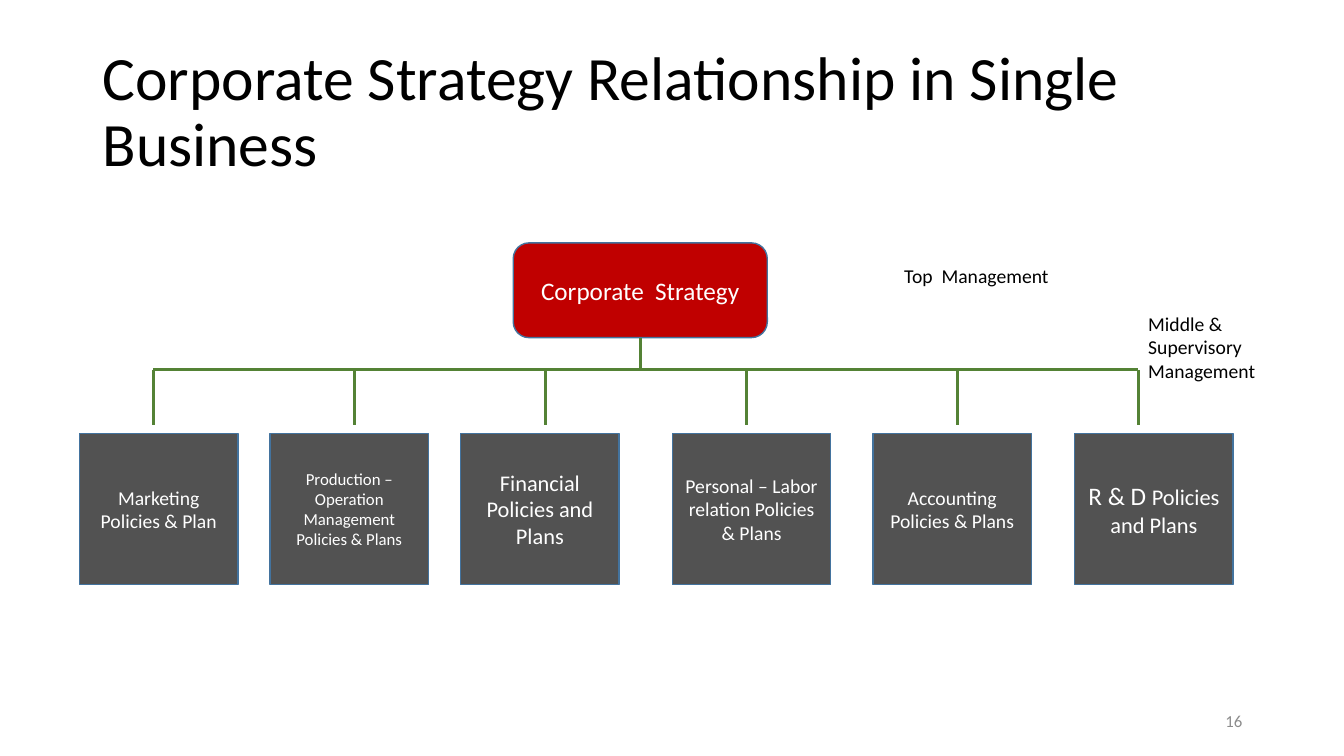
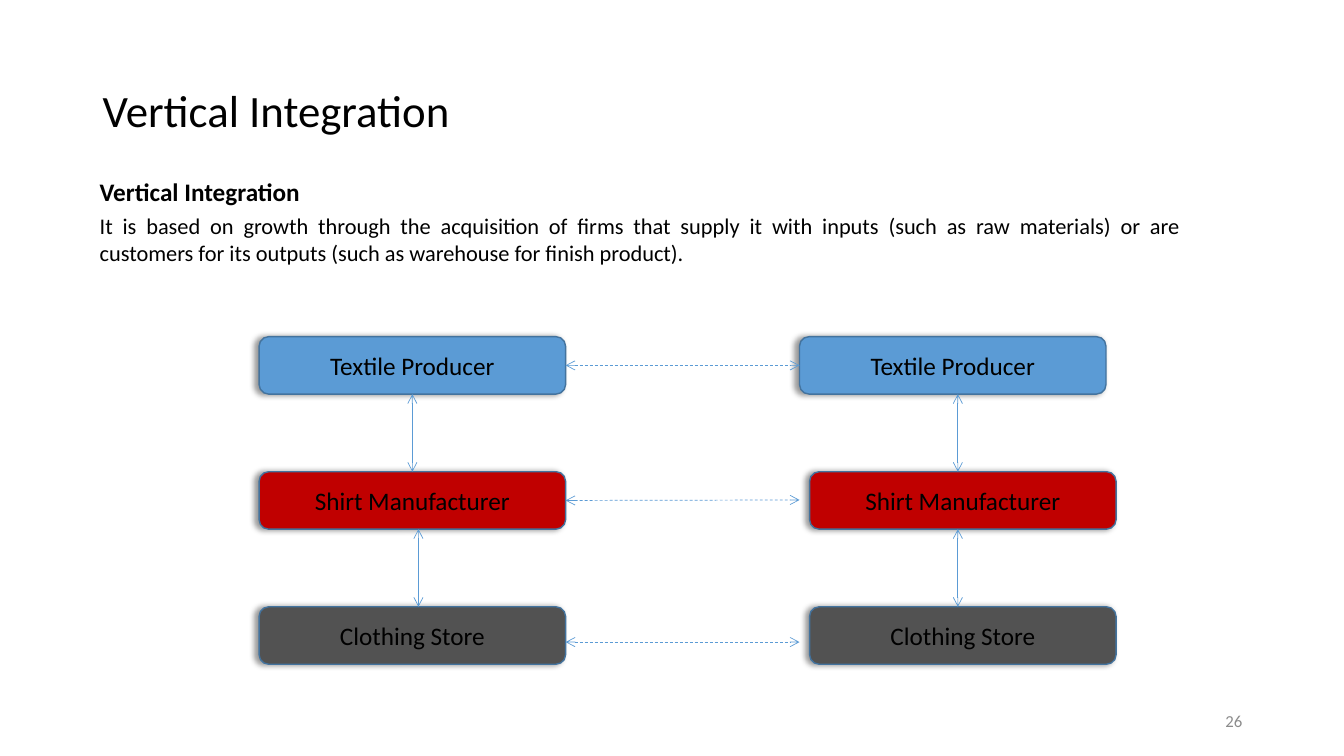
import dataclasses

import pptx
import pptx.dml.color
import pptx.enum.dml
import pptx.enum.shapes
import pptx.enum.text
import pptx.oxml
import pptx.oxml.ns
import pptx.util

ALIGN = pptx.enum.text.PP_ALIGN
ANCHOR = pptx.enum.text.MSO_ANCHOR
AUTO_SIZE = pptx.enum.text.MSO_AUTO_SIZE
SHAPE = pptx.enum.shapes.MSO_SHAPE
BOTTOM, RIGHT, LEFT, TOP = 2, 3, 1, 0
EMU_PER_PX = 9144  # 100 px to the inch
BLANK_LAYOUT = 6


@dataclasses.dataclass(frozen=True)
class Theme:
    font: str = "Calibri"
    black: str = "000000"
    white: str = "FFFFFF"
    muted: str = "8C8C8C"
    red: str = "C00000"
    grey: str = "525252"
    blue: str = "5B9BD5"
    outline: str = "43739E"
    green: str = "548235"
    title: int = 44
    small_title: int = 32
    heading: int = 18
    body: int = 16
    label: int = 14
    small: int = 12
    outline_width: float = 1
    tree_width: float = 2.25
    arrow_width: float = 0.5


THEME = Theme()

TITLE_BOX = (92, 40, 1150, 145)
NUMBER_BOX = (942, 695, 300, 40)

# Strategy tree
STRATEGY_TITLE = "Corporate Strategy Relationship in Single Business"
STRATEGY_BOX = (509, 241, 252, 94)
STRATEGY_TEXT = "Corporate  Strategy"
POLICY_TOP, POLICY_WIDTH, POLICY_HEIGHT = 430, 157, 150
BRANCH_TOP, BRANCH_BOTTOM = 367, 422
# box left, branch x, runs of (text, size)
POLICIES = [
    (79, 152, [("Marketing Policies & Plan", THEME.label)]),
    (268, 352, [("Production – Operation Management Policies & Plans", THEME.small)]),
    (457, 541, [("Financial Policies and Plans", THEME.body)]),
    (667, 740, [("Personal – Labor relation Policies & Plans", THEME.label)]),
    (866, 950, [("Accounting Policies & Plans", THEME.label)]),
    (1066, 1129, [("R & D ", THEME.heading), ("Policies and Plans", THEME.body)]),
]
LEVEL_LABELS = [
    ((1129, 304, 184, 81), "Middle & Supervisory Management"),
    ((887, 257, 283, 34), "Top  Management"),
]

# Vertical integration
INTEGRATION_TITLE = "Vertical Integration"
HEADING_BOX = (89, 170, 220, 40)
DEFINITION_BOX = (89, 206, 1092, 64)
DEFINITION = (
    "It is based on growth through the acquisition of firms that supply it with inputs "
    "(such as raw materials) or are customers for its outputs "
    "(such as warehouse for finish product)."
)
STAGE_LEFT, STAGE_TOP, STAGE_STEP = 257, 334, 134
STAGE_WIDTH, STAGE_HEIGHT = 304, 57
ACROSS_END = 793
# text, fill, left of the right-hand box, y of the arrow across
STAGES = [
    ("Textile Producer", THEME.blue, 793, 362),
    ("Shirt Manufacturer", THEME.red, 803, 496),
    ("Clothing Store", THEME.grey, 803, 637),
]
# x of the left and right arrows below each stage but the last
DOWN_ARROWS = [(409, 950), (415, 950)]


def px(value):
    return pptx.util.Emu(value * EMU_PER_PX)


def rgb(value):
    return pptx.dml.color.RGBColor.from_string(value)


def write(shape, runs, color, align=ALIGN.LEFT, anchor=ANCHOR.TOP, bold=False):
    """Fill the shape's one paragraph with (text, size) runs."""
    frame = shape.text_frame
    frame.word_wrap = True
    frame.vertical_anchor = anchor
    paragraph = frame.paragraphs[0]
    paragraph.alignment = align
    for text, size in runs:
        run = paragraph.add_run()
        run.text = text
        run.font.name = THEME.font
        run.font.size = pptx.util.Pt(size)
        run.font.bold = bold
        run.font.color.rgb = rgb(color)
    return paragraph


def add_text(slide, box, text, size, color=THEME.black, **style):
    shape = slide.shapes.add_textbox(*map(px, box))
    write(shape, [(text, size)], color, **style)
    return shape


def add_box(slide, kind, box, fill, runs, color):
    shape = slide.shapes.add_shape(kind, *map(px, box))
    shape.shadow.inherit = False
    shape.fill.solid()
    shape.fill.fore_color.rgb = rgb(fill)
    shape.line.color.rgb = rgb(THEME.outline)
    shape.line.width = pptx.util.Pt(THEME.outline_width)
    write(shape, runs, color, ALIGN.CENTER, ANCHOR.MIDDLE)
    return shape


def add_left_shadow(shape):
    effects = shape.element.spPr.find(pptx.oxml.ns.qn("a:effectLst"))
    effects.append(pptx.oxml.parse_xml(
        f'<a:outerShdw {pptx.oxml.ns.nsdecls("a")} blurRad="50800" dist="38100" '
        'dir="10800000" algn="r" rotWithShape="0"><a:prstClr val="black">'
        '<a:alpha val="40000"/></a:prstClr></a:outerShdw>'))


def add_line(slide, start, end, color, width, begin=None, finish=None):
    """Draw a line; begin and finish are optional (shape, side) joints."""
    connector = slide.shapes.add_connector(
        pptx.enum.shapes.MSO_CONNECTOR.STRAIGHT, *map(px, start + end))
    connector.line.color.rgb = rgb(color)
    connector.line.width = pptx.util.Pt(width)
    if begin:
        connector.begin_connect(*begin)
    if finish:
        connector.end_connect(*finish)
    connector.element.spPr.append(pptx.oxml.parse_xml(
        f'<a:effectLst {pptx.oxml.ns.nsdecls("a")}/>'))
    return connector


def add_arrow(slide, start, end, begin=None, finish=None, dashed=False):
    arrow = add_line(slide, start, end, THEME.blue, THEME.arrow_width, begin, finish)
    if dashed:
        arrow.line.dash_style = pptx.enum.dml.MSO_LINE.DASH
    outline = arrow.element.spPr.find(pptx.oxml.ns.qn("a:ln"))
    for tag in ("headEnd", "tailEnd"):
        outline.append(pptx.oxml.parse_xml(
            f'<a:{tag} {pptx.oxml.ns.nsdecls("a")} type="arrow"/>'))


def add_slide(presentation, title, title_size, number):
    slide = presentation.slides.add_slide(presentation.slide_layouts[BLANK_LAYOUT])
    title_shape = add_text(slide, TITLE_BOX, title, title_size, anchor=ANCHOR.MIDDLE)
    title_shape.text_frame.paragraphs[0].line_spacing = 0.9
    add_text(slide, NUMBER_BOX, number, THEME.small, THEME.muted,
             align=ALIGN.RIGHT, anchor=ANCHOR.MIDDLE)
    return slide


def build_strategy_tree(presentation):
    slide = add_slide(presentation, STRATEGY_TITLE, THEME.title, "16")
    strategy = add_box(slide, SHAPE.ROUNDED_RECTANGLE, STRATEGY_BOX, THEME.red,
                       [(STRATEGY_TEXT, THEME.heading)], THEME.white)
    for left, _, runs in POLICIES:
        add_box(slide, SHAPE.RECTANGLE, (left, POLICY_TOP, POLICY_WIDTH, POLICY_HEIGHT),
                THEME.grey, runs, THEME.white)

    branches = [branch for _, branch, _ in POLICIES]
    left, top, width, height = STRATEGY_BOX
    stem = left + width // 2
    lines = [((branches[0], BRANCH_TOP), (branches[-1], BRANCH_TOP), None)]
    lines += [((x, BRANCH_TOP), (x, BRANCH_BOTTOM), None) for x in branches]
    lines.append(((stem, top + height), (stem, BRANCH_TOP), (strategy, BOTTOM)))
    for start, end, begin in lines:
        add_line(slide, start, end, THEME.green, THEME.tree_width, begin)

    for box, text in LEVEL_LABELS:
        label = add_text(slide, box, text, THEME.label)
        label.text_frame.auto_size = AUTO_SIZE.SHAPE_TO_FIT_TEXT


def build_vertical_integration(presentation):
    slide = add_slide(presentation, INTEGRATION_TITLE, THEME.small_title, "26")
    heading = add_text(slide, HEADING_BOX, INTEGRATION_TITLE, THEME.heading, bold=True)
    heading.text_frame.word_wrap = False
    definition = add_text(slide, DEFINITION_BOX, DEFINITION, THEME.body, align=ALIGN.JUSTIFY)
    for shape in (heading, definition):
        shape.text_frame.auto_size = AUTO_SIZE.SHAPE_TO_FIT_TEXT

    tops = [STAGE_TOP + row * STAGE_STEP for row in range(len(STAGES))]
    pairs = []
    for top, (text, fill, right_left, _) in zip(tops, STAGES):
        pair = [add_box(slide, SHAPE.ROUNDED_RECTANGLE,
                        (left, top, STAGE_WIDTH, STAGE_HEIGHT), fill,
                        [(text, THEME.heading)], THEME.black)
                for left in (STAGE_LEFT, right_left)]
        for shape in pair:
            add_left_shadow(shape)
        pairs.append(pair)

    middle = STAGE_HEIGHT // 2
    for top, (_, _, right_left, y), (left_box, right_box) in zip(tops, STAGES, pairs):
        centred = y == top + middle
        add_arrow(slide, (STAGE_LEFT + STAGE_WIDTH, y), (ACROSS_END, y),
                  (left_box, RIGHT) if centred else None,
                  (right_box, LEFT) if centred and right_left == ACROSS_END else None,
                  dashed=True)

    for row, arrows in enumerate(DOWN_ARROWS):
        lefts = (STAGE_LEFT, STAGES[row][2])
        for x, left, upper, lower in zip(arrows, lefts, pairs[row], pairs[row + 1]):
            centred = x == left + STAGE_WIDTH // 2
            add_arrow(slide, (x, tops[row] + STAGE_HEIGHT), (x, tops[row + 1]),
                      (upper, BOTTOM) if centred else None,
                      (lower, TOP) if centred else None)


def main():
    presentation = pptx.Presentation()
    presentation.slide_width = px(1333)
    presentation.slide_height = px(750)
    build_strategy_tree(presentation)
    build_vertical_integration(presentation)
    presentation.save("out.pptx")


if __name__ == "__main__":
    main()
